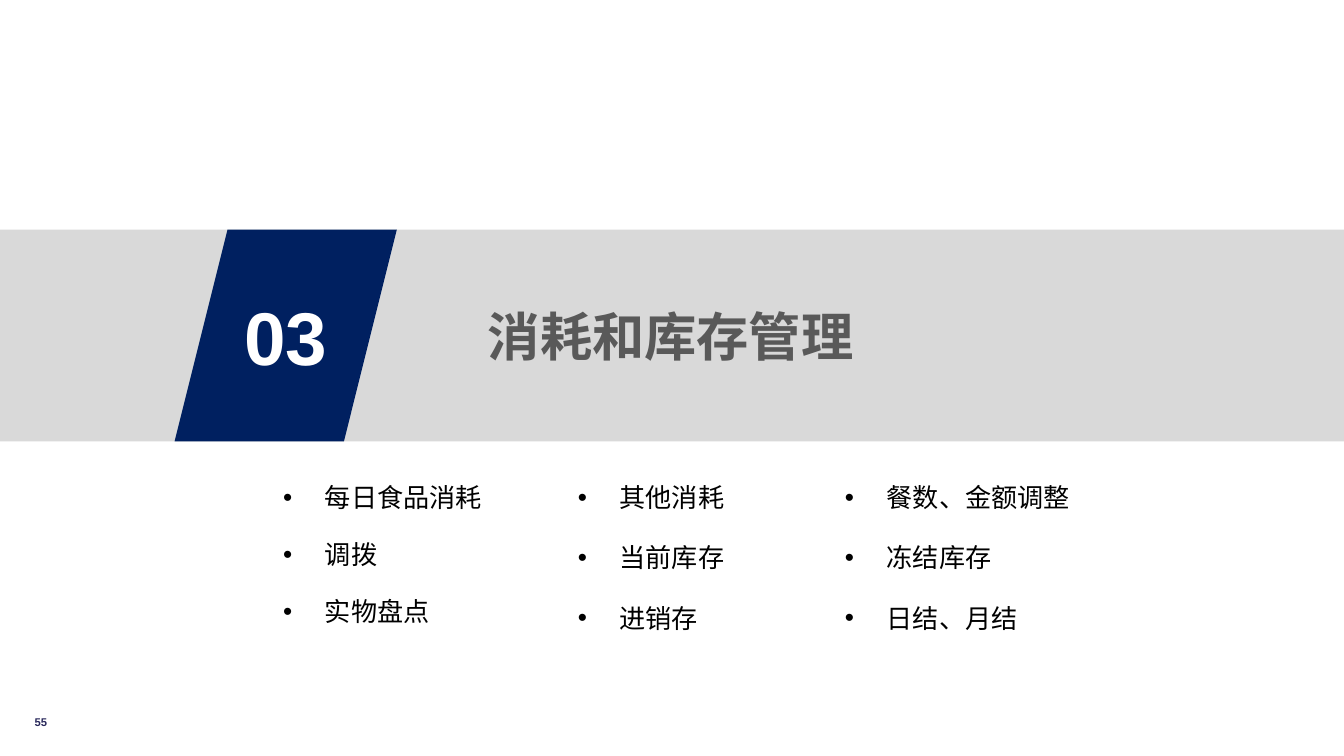
from dataclasses import dataclass

from lxml.etree import SubElement
from pptx import Presentation
from pptx.dml.color import RGBColor as Rgb
from pptx.enum.shapes import MSO_SHAPE as Shape
from pptx.enum.text import MSO_ANCHOR as Anchor, MSO_AUTO_SIZE as AutoSize, PP_ALIGN as Align
from pptx.oxml.ns import qn
from pptx.util import Cm, Pt


@dataclass(frozen=True)
class Theme:
    font: str = "Arial"
    band: str = "D9D9D9"
    navy: str = "002060"
    title: str = "595959"
    white: str = "FFFFFF"
    body: str = "000000"
    footer: str = "2A295C"
    number_size: int = 40
    title_size: int = 28
    body_size: int = 14
    footer_size: int = 6


class SlideBuilder:
    def __init__(self, slide, theme):
        self.slide = slide
        self.theme = theme

    def add_span(self, para, text, size, color, bold=False):
        span = para.add_run()
        span.text = text
        span.font.name = self.theme.font
        span.font.size = Pt(size)
        span.font.bold = bold
        span.font.color.rgb = Rgb.from_string(color)

    def add_panel(self, kind, left, top, width, height, fill, text, size, color):
        panel = self.slide.shapes.add_shape(kind, Cm(left), Cm(top), Cm(width), Cm(height))
        panel.shadow.inherit = False
        panel.fill.solid()
        panel.fill.fore_color.rgb = Rgb.from_string(fill)
        panel.line.fill.background()
        frame = panel.text_frame
        frame.vertical_anchor = Anchor.MIDDLE
        para = frame.paragraphs[0]
        para.alignment = Align.CENTER
        self.add_span(para, text, size, color, bold=True)

    def add_bullet(self, left, top, text):
        width = 1.3 + 0.5 * len(text)
        box = self.slide.shapes.add_textbox(Cm(left), Cm(top), Cm(width), Cm(0.86))
        frame = box.text_frame
        frame.word_wrap = False
        frame.auto_size = AutoSize.SHAPE_TO_FIT_TEXT
        para = frame.paragraphs[0]
        properties = para._p.get_or_add_pPr()
        indent = Cm(0.79)
        properties.set("marL", str(indent))
        properties.set("indent", str(-indent))
        SubElement(properties, qn("a:buFont")).set("typeface", self.theme.font)
        SubElement(properties, qn("a:buChar")).set("char", "•")
        self.add_span(para, text, self.theme.body_size, self.theme.body)

    def add_page_number(self, left, top, width, height, text):
        box = self.slide.shapes.add_textbox(Cm(left), Cm(top), Cm(width), Cm(height))
        frame = box.text_frame
        frame.word_wrap = True
        frame.margin_left = frame.margin_right = frame.margin_top = frame.margin_bottom = 0
        frame.vertical_anchor = Anchor.BOTTOM
        para = frame.paragraphs[0]
        para.alignment = Align.RIGHT
        self.add_span(para, text, self.theme.footer_size, self.theme.footer, bold=True)


def main():
    deck = Presentation()
    deck.slide_width, deck.slide_height = Cm(25.4), Cm(14.28)
    theme = Theme()
    page = SlideBuilder(deck.slides.add_slide(deck.slide_layouts[6]), theme)

    page.add_page_number(0.23, 13.44, 0.66, 0.33, "55")

    band_top, band_height = 4.34, 4
    page.add_panel(Shape.RECTANGLE, -0.05, band_top, 25.45, band_height, theme.band,
                   "消耗和库存管理", theme.title_size, theme.title)
    page.add_panel(Shape.PARALLELOGRAM, 3.3, band_top, 4.2, band_height, theme.navy,
                   "03", theme.number_size, theme.white)

    topics_top = 8.97
    columns = [
        (5.1, 1.08, ["每日食品消耗", "调拨", "实物盘点"]),
        (10.67, 1.14, ["其他消耗", "当前库存", "进销存"]),
        (15.72, 1.14, ["餐数、金额调整", "冻结库存", "日结、月结"]),
    ]
    for left, pitch, topics in columns:
        for row, topic in enumerate(topics):
            page.add_bullet(left, topics_top + row * pitch, topic)

    deck.save("out.pptx")


if __name__ == "__main__":
    main()
